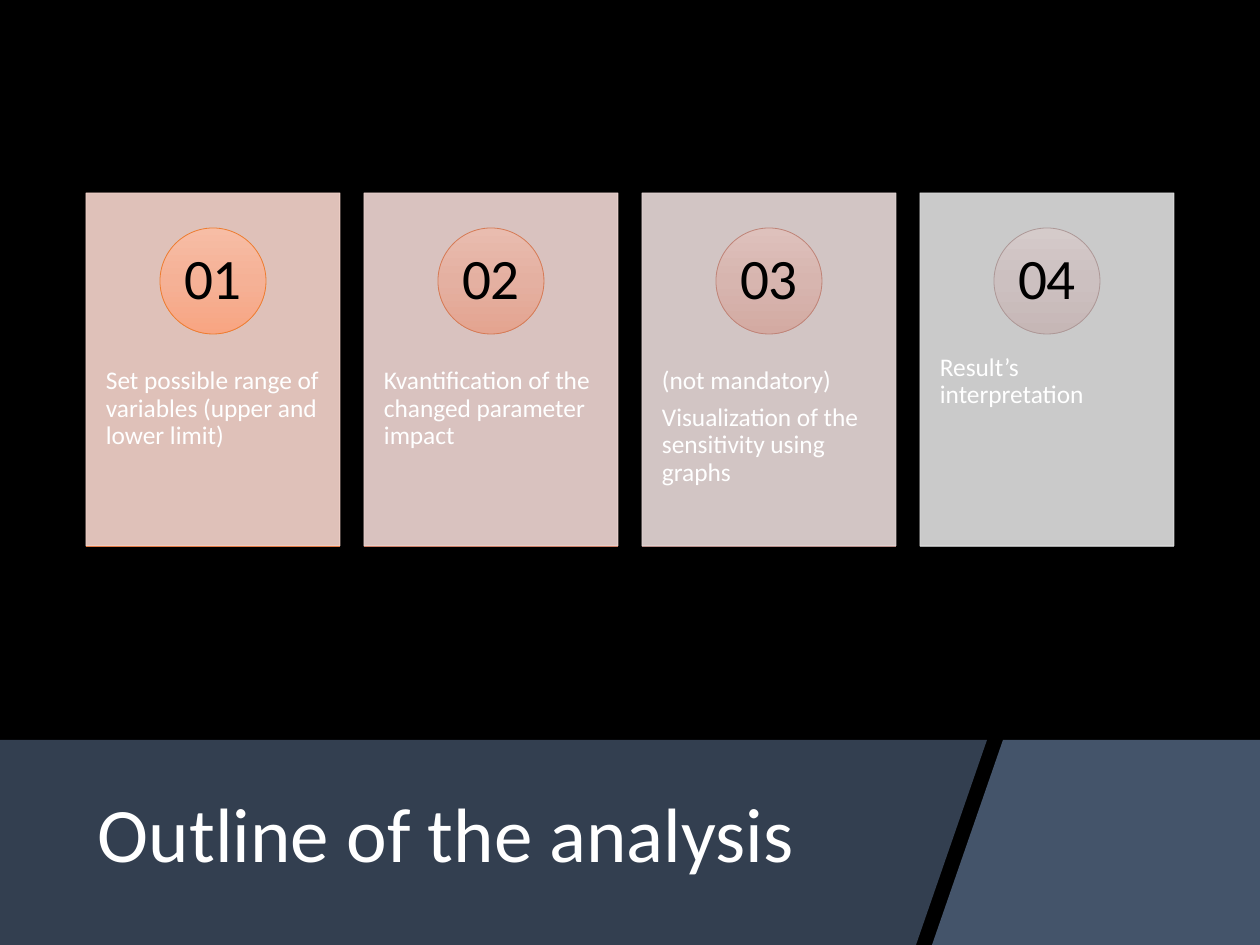
import copy

import pptx
import pptx.dml.color
import pptx.enum.dml
import pptx.enum.shapes
import pptx.enum.text
import pptx.oxml
import pptx.oxml.ns
import pptx.util

SCALE = 8000  # EMU in one px
WIDTH, HEIGHT = 1260, 945

COLORS = {
    "background": "000000",
    "band": "333F50",
    "corner": "44546A",
    "light": "FFFFFF",
    "dark": "000000",
}

# Card text, card fill, circle gradient, circle line, base line
STEPS = [
    (["Set possible range of variables (upper and lower limit)"],
     "F8D7CE", ["F7BDA5", "F5B196", "F8A582"], "ED7D31", "E07A44"),
    (["Kvantification of the changed parameter impact"],
     "F1D8D4", ["E9BCAF", "E4B0A1", "E4A490"], "D57B56", "CA7E67"),
    (["(not mandatory)", "Visualization of the sensitivity using graphs"],
     "E9DBDA", ["DEC1BC", "D7B5AF", "D3AAA2"], "BF8478", "B68D88"),
    (["Result’s interpretation"],
     "E1E1E1", ["D5CBCA", "CCC0C0", "C6B7B6"], "AD9897", "A5A5A5"),
]

BAND_TOP = 740
CARD_LEFT, CARD_TOP, CARD_WIDTH, CARD_HEIGHT, CARD_PITCH = 86, 193, 254, 353, 278
TEXT_TOP, TEXT_HEIGHT = 327, 213
CIRCLE_TOP, CIRCLE_SIZE = 228, 106
NUMBER_INSET = 15


def px(value):
    return pptx.util.Emu(value * SCALE)


def rgb(color):
    return pptx.dml.color.RGBColor.from_string(color)


def write_text(shape, paragraphs, size, color, anchor="TOP", align="LEFT",
               insets=(11, 6), space_after=0, font="Calibri"):
    frame = shape.text_frame
    frame.word_wrap = True
    frame.vertical_anchor = pptx.enum.text.MSO_ANCHOR[anchor]
    frame.margin_left = frame.margin_right = px(insets[0])
    frame.margin_top = frame.margin_bottom = px(insets[1])
    for index, text in enumerate(paragraphs):
        paragraph = frame.add_paragraph() if index else frame.paragraphs[0]
        paragraph.alignment = pptx.enum.text.PP_ALIGN[align]
        paragraph.line_spacing = 0.9
        paragraph.space_after = pptx.util.Pt(space_after)
        run = paragraph.add_run()
        run.text = text
        run.font.name = font
        run.font.size = pptx.util.Pt(size)
        run.font.color.rgb = rgb(color)


class SlideBuilder:
    line_width = pptx.util.Pt(0.5)

    def __init__(self, presentation):
        self.slide = presentation.slides.add_slide(presentation.slide_layouts[6])
        self.shapes = self.slide.shapes
        fill = self.slide.background.fill
        fill.solid()
        fill.fore_color.rgb = rgb(COLORS["background"])

    def outline(self, line, color):
        line.color.rgb = rgb(color)
        line.width = self.line_width

    def polygon(self, points, color):
        builder = self.shapes.build_freeform(*points[0], scale=SCALE)
        builder.add_line_segments(points[1:], close=True)
        shape = builder.convert_to_shape()
        shape.shadow.inherit = False
        shape.fill.solid()
        shape.fill.fore_color.rgb = rgb(color)
        shape.line.fill.background()

    def preset(self, kind, left, top, width, height, line_color):
        shape = self.shapes.add_shape(
            pptx.enum.shapes.MSO_SHAPE[kind], px(left), px(top), px(width), px(height))
        shape.shadow.inherit = False
        self.outline(shape.line, line_color)
        return shape

    def card(self, left, top, width, height, color, opacity=90):
        shape = self.preset("RECTANGLE", left, top, width, height, color)
        shape.fill.solid()
        shape.fill.fore_color.rgb = rgb(color)
        # Same transparency for fill and line
        for node in shape._element.spPr.iter(pptx.oxml.ns.qn("a:srgbClr")):
            alpha = pptx.oxml.parse_xml(
                f'<a:alpha {pptx.oxml.ns.nsdecls("a")} val="{opacity * 1000}"/>')
            node.append(alpha)

    def circle(self, left, top, size, gradient, line_color):
        shape = self.preset("OVAL", left, top, size, size, line_color)
        shape.fill.gradient()
        shape.fill.gradient_angle = 270
        # A middle stop between the two default ones
        stops = next(shape._element.spPr.iter(pptx.oxml.ns.qn("a:gsLst")))
        stops.insert(1, copy.deepcopy(stops[0]))
        for index, color in enumerate(gradient):
            stop = shape.fill.gradient_stops[index]
            stop.position = index / (len(gradient) - 1)
            stop.color.rgb = rgb(color)

    def rule(self, left, top, width, color):
        connector = self.shapes.add_connector(
            pptx.enum.shapes.MSO_CONNECTOR.STRAIGHT,
            px(left), px(top), px(left + width), px(top))
        self.outline(connector.line, color)
        connector._element.spPr.append(
            pptx.oxml.parse_xml(f'<a:effectLst {pptx.oxml.ns.nsdecls("a")}/>'))

    def text_box(self, left, top, width, height, paragraphs, **style):
        box = self.shapes.add_textbox(px(left), px(top), px(width), px(height))
        write_text(box, paragraphs, **style)


def main():
    presentation = pptx.Presentation()
    presentation.slide_width = px(WIDTH)
    presentation.slide_height = px(HEIGHT)
    builder = SlideBuilder(presentation)

    # Bottom band with slanted corner, and title
    builder.polygon([(1003, BAND_TOP), (WIDTH, BAND_TOP), (WIDTH, HEIGHT), (932, HEIGHT)],
                    COLORS["corner"])
    builder.polygon([(-2, BAND_TOP), (987, BAND_TOP), (916, HEIGHT), (-2, HEIGHT)],
                    COLORS["band"])
    builder.text_box(87, 762, 834, 151, ["Outline of the analysis"],
                     size=48.5, color=COLORS["light"], anchor="MIDDLE")

    # Numbered cards
    for index, (texts, card_color, gradient, circle_line, base_line) in enumerate(STEPS):
        left = CARD_LEFT + index * CARD_PITCH
        builder.card(left, CARD_TOP, CARD_WIDTH, CARD_HEIGHT, card_color)
        builder.text_box(left, TEXT_TOP, CARD_WIDTH, TEXT_HEIGHT, texts, size=16,
                         color=COLORS["light"], insets=(20, 41), space_after=5.6)

        circle_left = left + (CARD_WIDTH - CIRCLE_SIZE) // 2
        builder.circle(circle_left, CIRCLE_TOP, CIRCLE_SIZE, gradient, circle_line)
        number_size = CIRCLE_SIZE - 2 * NUMBER_INSET
        builder.text_box(circle_left + NUMBER_INSET, CIRCLE_TOP + NUMBER_INSET,
                         number_size, number_size, [f"{index + 1:02}"], size=36,
                         color=COLORS["dark"], anchor="MIDDLE", align="CENTER",
                         insets=(8, 1))
        builder.rule(left, CARD_TOP + CARD_HEIGHT, CARD_WIDTH, base_line)

    presentation.save("out.pptx")


if __name__ == "__main__":
    main()
